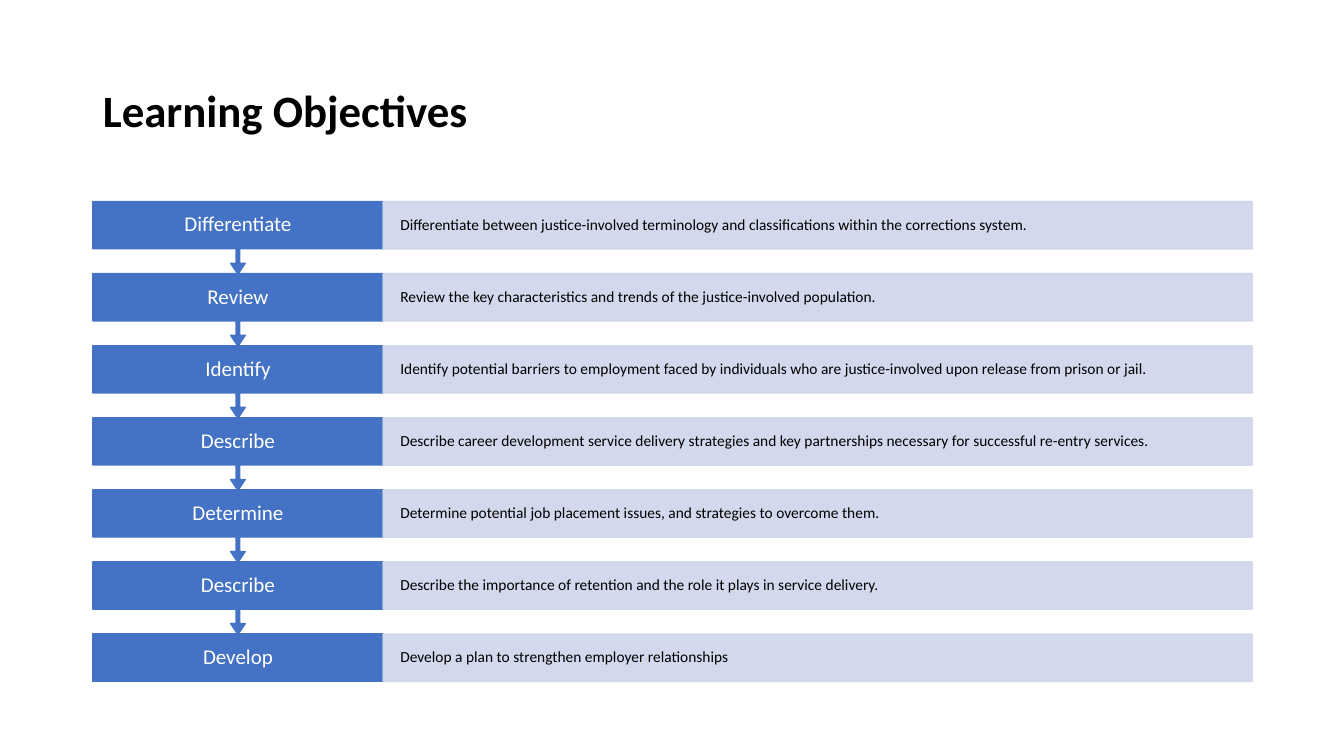
import lxml.etree
import pptx
import pptx.dml.color
import pptx.enum.shapes
import pptx.enum.text
import pptx.oxml.ns
import pptx.util

Inches = pptx.util.Inches
Pt = pptx.util.Pt
SHAPE = pptx.enum.shapes.MSO_SHAPE
ALIGN = pptx.enum.text.PP_ALIGN

TITLE = "Learning Objectives"
OBJECTIVES = [
    ("Differentiate", "Differentiate between justice-involved terminology and classifications within the corrections system."),
    ("Review", "Review the key characteristics and trends of the justice-involved population."),
    ("Identify", "Identify potential barriers to employment faced by individuals who are justice-involved upon release from prison or jail."),
    ("Describe", "Describe career development service delivery strategies and key partnerships necessary for successful re-entry services."),
    ("Determine", "Determine potential job placement issues, and strategies to overcome them."),
    ("Describe", "Describe the importance of retention and the role it plays in service delivery."),
    ("Develop", "Develop a plan to strengthen employer relationships"),
]

THEME = {
    "font": "Calibri",
    "step_fill": "4472C4",
    "panel_fill": "CFD5EA",
    "panel_opacity": 90,
    "title": {"size": Pt(32), "bold": True, "color": "000000"},
    "step": {"size": Pt(15), "bold": False, "color": "FFFFFF"},
    "panel": {"size": Pt(11), "bold": False, "color": "000000"},
}

LEFT, TOP = 0.92, 2.0
STEP_WIDTH, PANEL_WIDTH = 2.88, 8.62
ROW_HEIGHT, ROW_PITCH, CALLOUT_HEIGHT = 0.47, 0.715, 0.72
ARROW_ADJUSTMENTS = (0.05, 0.1, 0.15, 0.65)


def set_attributes(target, values):
    for name, value in values.items():
        setattr(target, name, value)


def write_text(shape, text, style, alignment, insets):
    frame = shape.text_frame
    frame.text = text
    set_attributes(frame, {
        "word_wrap": True,
        "auto_size": pptx.enum.text.MSO_AUTO_SIZE.NONE,
        "vertical_anchor": pptx.enum.text.MSO_ANCHOR.MIDDLE,
        "margin_left": Inches(insets[0]),
        "margin_right": Inches(insets[0]),
        "margin_top": Inches(insets[1]),
        "margin_bottom": Inches(insets[1]),
    })
    paragraph = frame.paragraphs[0]
    set_attributes(paragraph, {"alignment": alignment, "line_spacing": 0.9})
    font = paragraph.runs[0].font
    set_attributes(font, {"name": THEME["font"], "size": style["size"], "bold": style["bold"]})
    font.color.rgb = pptx.dml.color.RGBColor.from_string(style["color"])


def add_block(slide, kind, left, top, width, height, color, opacity=100):
    shape = slide.shapes.add_shape(kind, Inches(left), Inches(top), Inches(width), Inches(height))
    shape.shadow.inherit = False
    shape.fill.solid()
    shape.line.width = Pt(1)
    for target in (shape.fill.fore_color, shape.line.color):
        target.rgb = pptx.dml.color.RGBColor.from_string(color)
    if opacity < 100:
        for element in list(shape.element.spPr.iter(pptx.oxml.ns.qn("a:srgbClr"))):
            lxml.etree.SubElement(element, pptx.oxml.ns.qn("a:alpha"), val=str(opacity * 1000))
    return shape


def add_objective(slide, index, heading, description):
    top = TOP + index * ROW_PITCH
    is_last = index == len(OBJECTIVES) - 1
    kind = SHAPE.RECTANGLE if is_last else SHAPE.DOWN_ARROW_CALLOUT
    height = ROW_HEIGHT if is_last else CALLOUT_HEIGHT
    step = add_block(slide, kind, LEFT, top, STEP_WIDTH, height, THEME["step_fill"])
    if not is_last:
        for position, value in enumerate(ARROW_ADJUSTMENTS):
            step.adjustments[position] = value
    write_text(step, heading, THEME["step"], ALIGN.CENTER, (0.2, 0.12))
    panel = add_block(slide, SHAPE.RECTANGLE, LEFT + STEP_WIDTH, top, PANEL_WIDTH, ROW_HEIGHT,
                      THEME["panel_fill"], THEME["panel_opacity"])
    write_text(panel, description, THEME["panel"], ALIGN.LEFT, (0.17, 0.15))


def main():
    presentation = pptx.Presentation()
    set_attributes(presentation, {"slide_width": Inches(13.33), "slide_height": Inches(7.5)})
    slide = presentation.slides.add_slide(presentation.slide_layouts[5])
    title = slide.shapes.title
    set_attributes(title, {"left": Inches(LEFT), "top": Inches(0.4),
                           "width": Inches(STEP_WIDTH + PANEL_WIDTH), "height": Inches(1.45)})
    write_text(title, TITLE, THEME["title"], ALIGN.LEFT, (0.1, 0.05))
    for index, (heading, description) in reversed(list(enumerate(OBJECTIVES))):
        add_objective(slide, index, heading, description)
    presentation.save("out.pptx")


if __name__ == "__main__":
    main()
